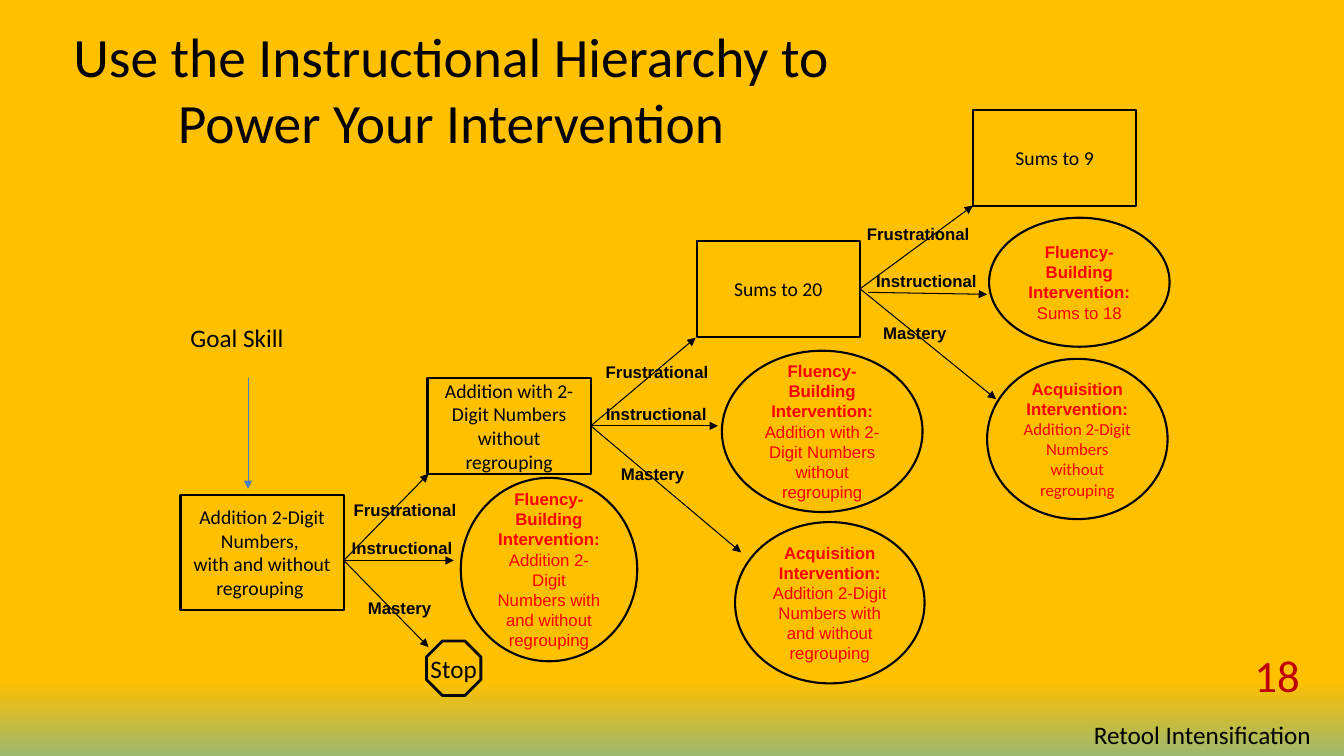
"""Build the instructional hierarchy slide on a grid of tenth-inch cells."""
from pptx import Presentation, util as u
from pptx.dml.color import RGBColor
from pptx.enum import shapes, text
from pptx.oxml.ns import qn
from lxml import etree

WIDE, HIGH = u.Inches(13.33), u.Inches(7.5)
COLS, ROWS = 133.3, 75
BLACK, RED = "000000", "FF0000"
KIND = shapes.MSO_SHAPE
LEFT, MID, RIGHT = text.PP_ALIGN.LEFT, text.PP_ALIGN.CENTER, text.PP_ALIGN.RIGHT
TOP, HALF = text.MSO_ANCHOR.TOP, text.MSO_ANCHOR.MIDDLE
SMALL = {"size": u.Pt(12), "name": "Arial", "bold": True}
SKILL = {"size": u.Pt(14), "name": "Calibri"}
NOTE = {"size": u.Pt(18), "name": "Calibri"}
PLAIN = {"bold": False}
ROUTES = (("Frustrational", 13), ("Instructional", 12.2), ("Mastery", 12.2))
FLUENT, ACQUIRE = "Fluency-Building Intervention:", "Acquisition Intervention:"
BOTH = "Addition 2-Digit Numbers with and without regrouping"

STAGES = [
    {"box": (96.5, 10.9, 16.2, 9.5), "skill": ["Sums to 9"], "fan": [], "goals": []},
    {"box": (69.1, 23.9, 16.2, 9.5), "skill": ["Sums to 20"],
     "fan": [((16.2, 4.75), (27.4, -3.5), (15.9, -2.2)),
             ((17, 5.1), (28.8, 5.3), (16.8, 2.5)),
             ((16.2, 4.75), (29.7, 15.7), (17.5, 7.6))],
     "goals": [((29, -2.3, 17.9, 12.8),
                [[(FLUENT + " ", {}), ("Sums to 18", PLAIN)]]),
               ((28.8, 11.7, 17.9, 15.9),
                [[(ACQUIRE, {})], [("Addition 2-Digit Numbers without regrouping",
                                    {"bold": False, "name": "Calibri"})]])]},
    {"box": (42.4, 37.5, 16.2, 9.5),
     "skill": ["Addition with 2-Digit Numbers without regrouping"],
     "fan": [((16.2, 4.75), (26.6, -4), (16.7, -2.1)),
             ((16.2, 4.75), (28.8, 4.75), (16.7, 2.1)),
             ((16.2, 4.75), (31.1, 17.3), (18.2, 8))],
     "goals": [((29.2, -2.7, 19.9, 16),
                [[(FLUENT, {})],
                 [("Addition with 2-Digit Numbers without regrouping", PLAIN)]]),
               ((30.5, 14.3, 18.8, 16), [[(ACQUIRE + " ", {}), (BOTH, PLAIN)]])]},
    {"box": (17.9, 49.1, 16.2, 11.4),
     "skill": ["Addition 2-Digit Numbers, ", "with and without regrouping "],
     "fan": [((16.2, 6.5), (24.6, -2.1), (16.2, 0)),
             ((16.2, 6.5), (27.1, 6.5), (16, 3.8)),
             ((16.2, 6.5), (24.6, 15.1), (17.6, 9.7))],
     "goals": [((27.8, -1.7, 17.5, 18.2), [[(FLUENT + " ", {}), (BOTH, PLAIN)]])]},
]


def paint(code):
    """Turn a hex string into a colour."""
    return RGBColor.from_string(code)


def dress(thing, look):
    """Set each attribute named in a dict of format values."""
    for key, val in look.items():
        setattr(thing, key, val)


def place(col, row):
    """Turn a grid point into slide lengths."""
    return round(WIDE * col / COLS), round(HIGH * row / ROWS)


def shift(box, spot):
    """Move a point or box by the corner of another box."""
    return (box[0] + spot[0], box[1] + spot[1], *spot[2:])


def write(shape, paras, look, code=BLACK, align=MID, anchor=HALF, **frame):
    """Fill a shape with paragraphs of runs."""
    body = shape.text_frame
    dress(body, {"word_wrap": True, "vertical_anchor": anchor, **frame})
    for num, runs in enumerate(paras):
        para = body.add_paragraph() if num else body.paragraphs[0]
        para.alignment = align
        for words, extra in runs:
            run = para.add_run()
            run.text = words
            dress(run.font, {**look, **extra})
            run.font.color.rgb = paint(code)


def outline(slide, kind, box, code=BLACK, width=1.5):
    """Add an unfilled preset shape."""
    shape = slide.shapes.add_shape(kind, *place(*box[:2]), *place(*box[2:]))
    shape.shadow.inherit = False
    shape.fill.background()
    shape.line.color.rgb = paint(code)
    shape.line.width = u.Pt(width)
    return shape


def label(slide, box, words, look, **style):
    """Add a text box with one line of words."""
    shape = slide.shapes.add_textbox(*place(*box[:2]), *place(*box[2:]))
    write(shape, [[(words, {})]], look, **{"align": LEFT, "anchor": TOP, **style})


def arrow(slide, start, end, code=BLACK):
    """Add a thin arrow between two grid points."""
    line = slide.shapes.add_connector(
        shapes.MSO_CONNECTOR.STRAIGHT, *place(*start), *place(*end))
    line.line.color.rgb = paint(code)
    line.line.width = u.Pt(0.75)
    etree.SubElement(line.line._get_or_add_ln(), qn("a:tailEnd"), type="triangle")
    etree.SubElement(line._element.spPr, qn("a:effectLst"))
    return line


def stage(slide, box, skill, fan, goals):
    """Place a skill, its three routes and their interventions."""
    card = outline(slide, KIND.RECTANGLE, box)
    write(card, [[(words, {})] for words in skill], SKILL)
    for spot, paras in goals:
        write(outline(slide, KIND.OVAL, shift(box, spot)), paras, SMALL, RED)
    for (name, width), (start, end, spot) in zip(ROUTES, fan):
        line = arrow(slide, shift(box, start), shift(box, end))
        if start == (box[2], box[3] / 2):
            line.begin_connect(card, 3)
        label(slide, (*shift(box, spot), width, 3), name, SMALL)


def goal(slide, box):
    """Place the goal caption and its arrow above the first skill."""
    label(slide, shift(box, (0, -17.6, 13.3, 4)), "Goal Skill", NOTE)
    arrow(slide, shift(box, (6.7, -11.6)), shift(box, (6.7, -0.6)), "4B7EBC")


def halt(slide, box):
    """Place the stop sign."""
    sign = outline(slide, KIND.OCTAGON, box, "03070C", 2)
    edges = ("margin_left", "margin_right", "margin_top", "margin_bottom")
    write(sign, [[("Stop", {})]], NOTE, word_wrap=False, **dict.fromkeys(edges, 0))


def head(slide, box):
    """Place the title."""
    label(slide, box, "Use the Instructional Hierarchy to Power Your Intervention",
          {"size": u.Pt(39.6), "name": "Calibri"}, align=MID, anchor=HALF)


def foot(slide, box):
    """Place the slide number above the footer."""
    label(slide, shift(box, (12.9, 0, 9.5, 4.1)), "18",
          {"size": u.Pt(32), "name": "Calibri"},
          code="C00000", align=RIGHT, anchor=HALF)
    label(slide, shift(box, (0, 6, 25.8, 4)), "Retool Intensification", NOTE)


def ground(slide):
    """Fill the background with a gradient from amber to green."""
    fill = slide.background.fill
    fill.gradient()
    fill.gradient_angle = 270
    for stop, (spot, code) in zip(fill.gradient_stops, ((0.9, "FFC000"), (1, "9CB86E"))):
        stop.position = spot
        stop.color.rgb = paint(code)


def main():
    """Build and save the deck."""
    deck = Presentation()
    dress(deck, {"slide_width": WIDE, "slide_height": HIGH})
    slide = deck.slides.add_slide(deck.slide_layouts[6])
    ground(slide)
    head(slide, (3.6, 1.5, 82.3, 14.5))
    for step in STAGES:
        stage(slide, **step)
    goal(slide, STAGES[-1]["box"])
    halt(slide, (42.3, 63.6, 5.4, 5.4))
    foot(slide, (107.5, 64.9))
    deck.save("out.pptx")


if __name__ == "__main__":
    main()
